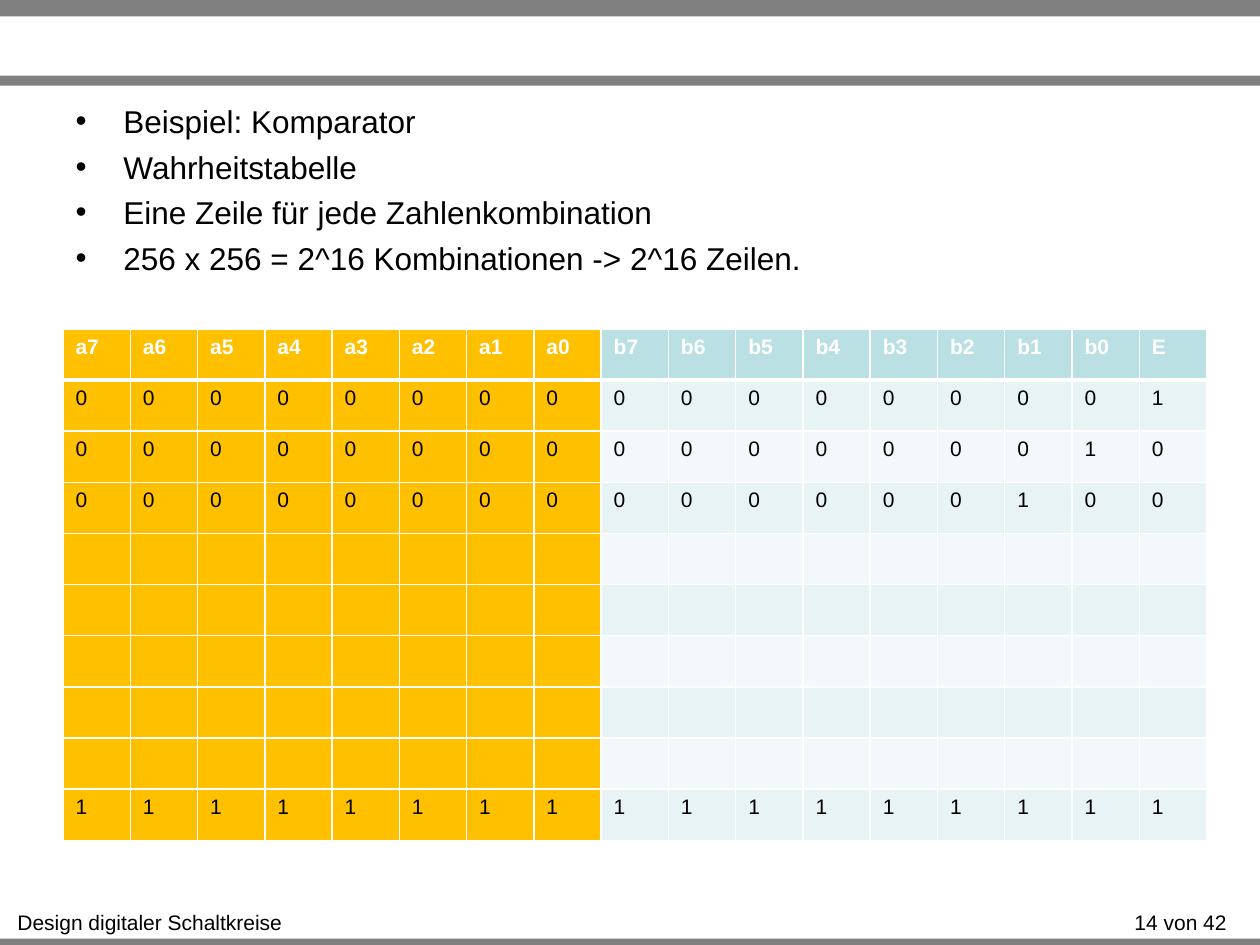
from dataclasses import dataclass

from lxml.etree import SubElement
from pptx import Presentation
from pptx.dml.color import RGBColor as RGB
from pptx.enum.shapes import MSO_SHAPE as Shape
from pptx.enum.text import MSO_AUTO_SIZE as AutoSize, PP_ALIGN as Align
from pptx.oxml.ns import qn
from pptx.util import Inches, Pt

# Content
BULLETS = [
    "Beispiel: Komparator",
    "Wahrheitstabelle",
    "Eine Zeile für jede Zahlenkombination",
    "256 x 256 = 2^16 Kombinationen -> 2^16 Zeilen.",
]
A_BITS = [f"a{i}" for i in range(7, -1, -1)]
B_BITS = [f"b{i}" for i in range(7, -1, -1)]
EMPTY = " " * 17
ROWS = [
    A_BITS + B_BITS + ["E"],
    "0" * 16 + "1",
    "0" * 15 + "10",
    "0" * 14 + "100",
    *[EMPTY] * 5,
    "1" * 17,
]
FOOTERS = [("Design digitaler Schaltkreise", 0.03, 2.32), ("14 von 42", 8.83, 1.08)]
BARS = [(0, 0.13), (0.6, 0.08), (7.45, 0.05)]  # top, height


@dataclass(frozen=True)
class Theme:
    font: str = "Arial"
    body: int = 18
    small: int = 12
    text: str = "000000"
    white: str = "FFFFFF"
    bar: str = "808080"
    a_side: str = "FFC000"
    b_head: str = "BBE0E3"
    bands: tuple = ("E7F3F4", "F3F9FA")


T = Theme()
W, H = 10, 7.5
TABLE = (0.5, 2.61, 9.08, 4.06)


def format_runs(p, size, color=T.text, bold=False):
    for r in p.runs:
        r.font.name, r.font.size, r.font.bold = T.font, Pt(size), bold
        r.font.color.rgb = RGB.from_string(color)


def set_border(cell, side, width):
    ln = SubElement(cell._tc.get_or_add_tcPr(), qn(f"a:ln{side}"), w=str(Pt(width)))
    fill = SubElement(ln, qn("a:solidFill"))
    SubElement(fill, qn("a:srgbClr"), val=T.white)


def cell_color(row, col):
    if col < len(A_BITS):
        return T.a_side
    return T.b_head if row == 0 else T.bands[(row - 1) % 2]


def add_bars(s):
    for top, height in BARS:
        sp = s.shapes.add_shape(Shape.RECTANGLE, 0, Inches(top), Inches(W), Inches(height))
        sp.shadow.inherit = False
        sp.fill.solid()
        sp.fill.fore_color.rgb = RGB.from_string(T.bar)
        sp.line.fill.background()


def add_footers(s):
    for text, left, width in FOOTERS:
        sp = s.shapes.add_textbox(Inches(left), Inches(7.17), Inches(width), Inches(0.3))
        tf = sp.text_frame
        tf.word_wrap = False
        tf.text = text
        tf.paragraphs[0].alignment = Align.CENTER
        format_runs(tf.paragraphs[0], T.small)


def fill_body(sp):
    sp.left, sp.top, sp.width, sp.height = map(Inches, (0.5, 0.76, 9, 1.24))
    tf = sp.text_frame
    tf.auto_size = AutoSize.NONE
    tf.text = "\n".join(BULLETS)
    for i, p in enumerate(tf.paragraphs):
        pPr = p._p.get_or_add_pPr()
        pPr.set("marL", str(Inches(0.38)))
        pPr.set("indent", str(-Inches(0.38)))
        SubElement(pPr, qn("a:buFont"), typeface=T.font)
        SubElement(pPr, qn("a:buChar"), char="•")
        p.space_before = Pt(4.4 if i else 0)
        format_runs(p, T.body)


def add_truth_table(s):
    n_rows, n_cols = len(ROWS), len(ROWS[0])
    left, top, width, height = map(Inches, TABLE)
    table = s.shapes.add_table(n_rows, n_cols, left, top, width, height).table
    table.horz_banding = False
    for col in table.columns:
        col.width = width // n_cols
    for i, values in enumerate(ROWS):
        table.rows[i].height = height // n_rows
        for j, value in enumerate(values):
            cell = table.cell(i, j)
            for side in "LRTB":
                heavy = (i, side) in ((0, "B"), (1, "T"))
                set_border(cell, side, 3 if heavy else 1)
            cell.fill.solid()
            cell.fill.fore_color.rgb = RGB.from_string(cell_color(i, j))
            cell.text = value.strip()
            header = i == 0
            format_runs(cell.text_frame.paragraphs[0], T.small,
                        T.white if header else T.text, header)


def main():
    prs = Presentation()
    prs.slide_width, prs.slide_height = Inches(W), Inches(H)
    s = prs.slides.add_slide(prs.slide_layouts[1])
    title = s.shapes.title._element
    title.getparent().remove(title)  # the slide shows no title

    add_bars(s)
    add_footers(s)
    fill_body(s.placeholders[1])
    add_truth_table(s)
    prs.save("out.pptx")


if __name__ == "__main__":
    main()
